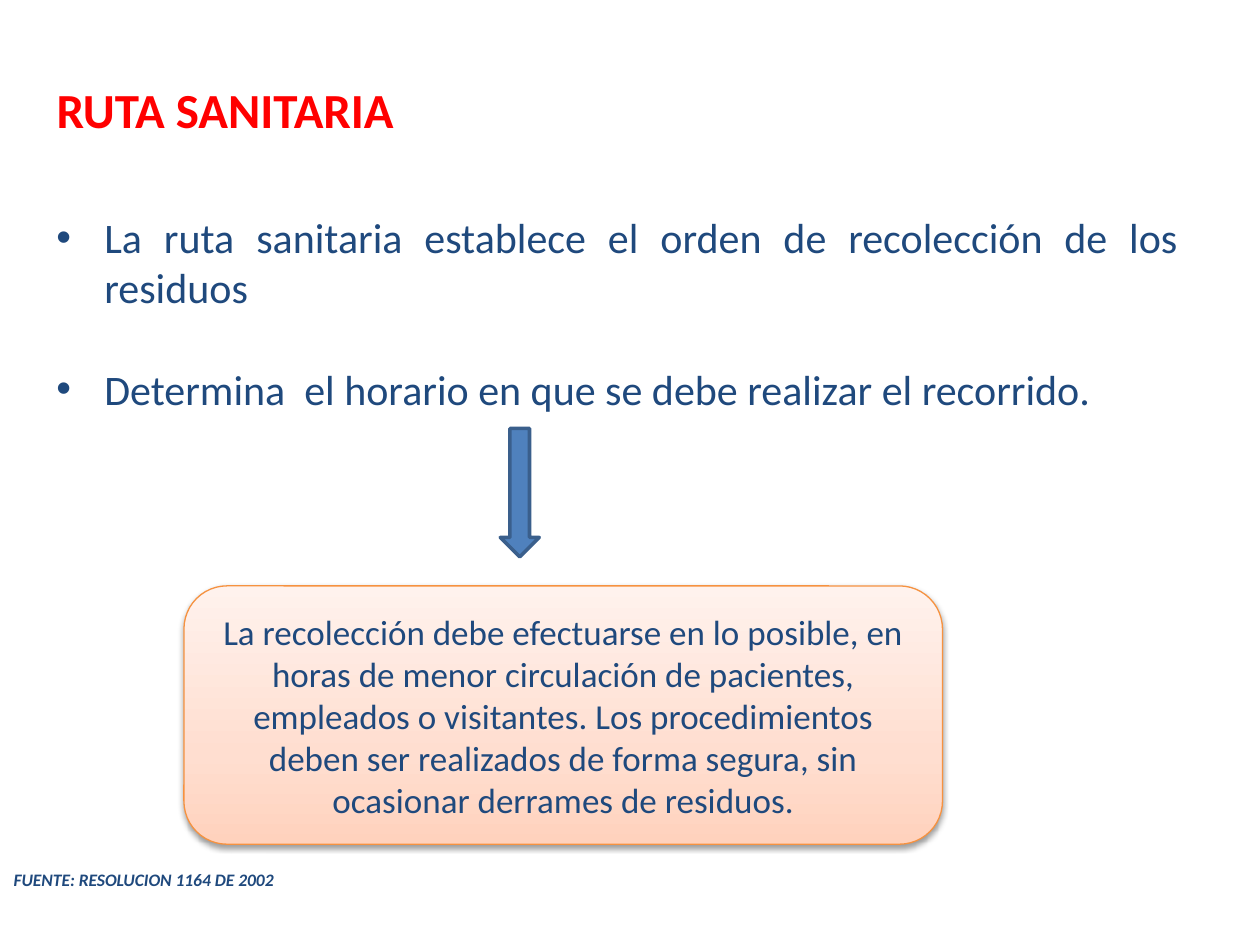
import copy
from dataclasses import dataclass

import pptx
import pptx.dml.color
import pptx.enum.shapes
import pptx.enum.text
import pptx.oxml
import pptx.oxml.ns
import pptx.util

RGBColor = pptx.dml.color.RGBColor
Align = pptx.enum.text.PP_ALIGN
Preset = pptx.enum.shapes.MSO_SHAPE

RED = RGBColor(0xFF, 0x00, 0x00)
NAVY = RGBColor(0x1F, 0x49, 0x7D)
BLUE = RGBColor(0x4F, 0x81, 0xBD)
DARK_BLUE = RGBColor(0x3A, 0x5F, 0x8C)
ORANGE = RGBColor(0xF6, 0x92, 0x40)
PEACH_STOPS = (
    (0, RGBColor(0xFF, 0xD2, 0xBD)),
    (0.35, RGBColor(0xFF, 0xDE, 0xD0)),
    (1, RGBColor(0xFF, 0xF2, 0xED)),
)

FONT = "Calibri"
COLUMNS, ROWS = 100, 75
CELL = pptx.util.Inches(0.1)
BULLET_INDENT = pptx.util.Inches(0.38)


@dataclass(frozen=True)
class Area:
    column: float
    row: float
    columns: float
    rows: float

    def lengths(self) -> tuple[int, ...]:
        return tuple(round(n * CELL) for n in (self.column, self.row, self.columns, self.rows))


@dataclass(frozen=True)
class Passage:
    area: Area
    lines: tuple[str, ...]
    size: float
    color: RGBColor = NAVY
    bold: bool = False
    italic: bool = False
    align: Align = Align.LEFT
    bulleted: bool = False
    gap: float = 0


PASSAGES = (
    Passage(Area(3.5, 5.8, 66.9, 5.7), ("RUTA SANITARIA",), 28, RED, bold=True),
    Passage(
        Area(3.5, 16.3, 91, 17.2),
        (
            "La ruta sanitaria establece el orden de recolección de los residuos",
            "Determina  el horario en que se debe realizar el recorrido.",
        ),
        24,
        align=Align.JUSTIFY,
        bulleted=True,
        gap=29,
    ),
    Passage(
        Area(0.1, 68.5, 50, 2.7),
        ("FUENTE: RESOLUCION 1164 DE 2002",),
        10,
        bold=True,
        italic=True,
    ),
)
ARROW_AREA = Area(39.7, 34, 3.1, 10.2)
ADVICE = Passage(
    Area(14.6, 46.5, 60.2, 20.5),
    (
        "La recolección debe efectuarse en lo posible, en horas de menor circulación "
        "de pacientes, empleados o visitantes. Los procedimientos deben ser realizados "
        "de forma segura, sin ocasionar derrames de residuos.",
    ),
    20,
    align=Align.CENTER,
)


def add_bullet(paragraph) -> None:
    properties = paragraph._p.get_or_add_pPr()
    properties.set("marL", str(BULLET_INDENT))
    properties.set("indent", str(-BULLET_INDENT))
    namespace = pptx.oxml.ns.nsdecls("a")
    properties.append(pptx.oxml.parse_xml(f'<a:buFont {namespace} typeface="Arial"/>'))
    properties.append(pptx.oxml.parse_xml(f'<a:buChar {namespace} char="•"/>'))


def write(frame, passage: Passage) -> None:
    frame.word_wrap = True
    frame.text = "\n".join(passage.lines)
    for index, paragraph in enumerate(frame.paragraphs):
        paragraph.alignment = passage.align
        if index and passage.gap:
            paragraph.space_before = pptx.util.Pt(passage.gap)
        if passage.bulleted:
            add_bullet(paragraph)
        for run in paragraph.runs:
            run.font.name = FONT
            run.font.size = pptx.util.Pt(passage.size)
            run.font.bold = passage.bold
            run.font.italic = passage.italic
            run.font.color.rgb = passage.color


def add_outlined(slide, preset: Preset, area: Area, color: RGBColor, width: float):
    shape = slide.shapes.add_shape(preset, *area.lengths())
    shape.shadow.inherit = False
    shape.line.color.rgb = color
    shape.line.width = pptx.util.Pt(width)
    return shape


def fill_upward(shape, stops) -> None:
    shape.fill.gradient()
    shape.fill.gradient_angle = 90
    stop_list = shape._element.spPr.find(".//" + pptx.oxml.ns.qn("a:gsLst"))
    stop_list.append(copy.deepcopy(stop_list[-1]))
    for stop, (position, color) in zip(shape.fill.gradient_stops, stops):
        stop.position = position
        stop.color.rgb = color


def drop_shadow(shape) -> None:
    effects = shape._element.spPr.find(pptx.oxml.ns.qn("a:effectLst"))
    effects.append(pptx.oxml.parse_xml(
        f'<a:outerShdw {pptx.oxml.ns.nsdecls("a")} blurRad="40000" dist="20000" '
        'dir="5400000" rotWithShape="0"><a:srgbClr val="000000">'
        '<a:alpha val="38000"/></a:srgbClr></a:outerShdw>'
    ))


def main() -> None:
    presentation = pptx.Presentation()
    presentation.slide_width = COLUMNS * CELL
    presentation.slide_height = ROWS * CELL
    slide = presentation.slides.add_slide(presentation.slide_layouts[6])

    for passage in PASSAGES:
        write(slide.shapes.add_textbox(*passage.area.lengths()).text_frame, passage)

    arrow = add_outlined(slide, Preset.DOWN_ARROW, ARROW_AREA, DARK_BLUE, 2)
    arrow.fill.solid()
    arrow.fill.fore_color.rgb = BLUE

    advice = add_outlined(slide, Preset.ROUNDED_RECTANGLE, ADVICE.area, ORANGE, 0.75)
    fill_upward(advice, PEACH_STOPS)
    drop_shadow(advice)
    advice.text_frame.vertical_anchor = pptx.enum.text.MSO_ANCHOR.MIDDLE
    write(advice.text_frame, ADVICE)

    presentation.save("out.pptx")


if __name__ == "__main__":
    main()
